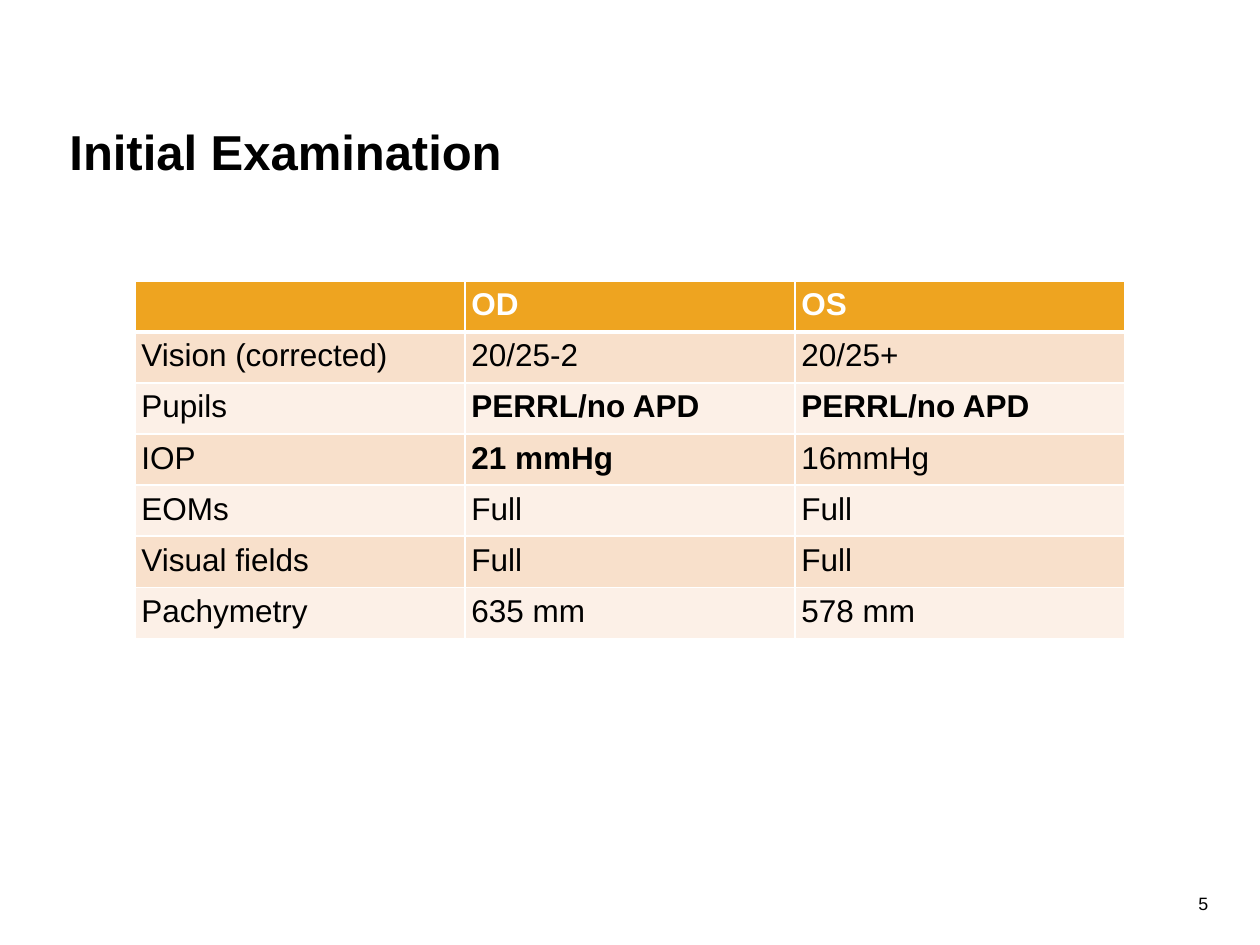
from lxml import etree
from pptx import Presentation
from pptx.dml.color import RGBColor
from pptx.enum.text import MSO_ANCHOR, PP_ALIGN
from pptx.oxml.ns import qn
from pptx.util import Cm, Pt

LEFT, RIGHT = PP_ALIGN.LEFT, PP_ALIGN.RIGHT
TOP, MIDDLE = MSO_ANCHOR.TOP, MSO_ANCHOR.MIDDLE
TITLE_ONLY = 5
INSET = Cm(0.13)

BLACK, WHITE = "000000", "FFFFFF"
HEADER_FILL = "EEA420"
BAND_FILLS = ("F8E0CB", "FCF0E7")
TITLE_FONT = {"name": "Arial", "size": Pt(28), "bold": True}
NUMBER_FONT = {"name": "Arial", "size": Pt(10.2), "bold": False}
CELL_FONT = {"name": "Arial", "size": Pt(18), "bold": False}

FINDINGS = [
    ("", "OD", "OS"),
    ("Vision (corrected)", "20/25-2", "20/25+"),
    ("Pupils", "PERRL/no APD", "PERRL/no APD"),
    ("IOP", "21 mmHg", "16mmHg"),
    ("EOMs", "Full", "Full"),
    ("Visual fields", "Full", "Full"),
    ("Pachymetry", "635 mm", "578 mm"),
]
NOTABLE = {"PERRL/no APD", "21 mmHg"}


def rgb(value):
    return RGBColor.from_string(value)


def set_all(target, values):
    for key, value in values.items():
        setattr(target, key, value)


def set_insets(target):
    set_all(target, dict.fromkeys(
        ("margin_left", "margin_top", "margin_right", "margin_bottom"), INSET))


def write(frame, text, font, color=BLACK, align=LEFT):
    frame.text = text
    paragraph = frame.paragraphs[0]
    paragraph.alignment = align
    set_all(paragraph.font, font)
    paragraph.font.color.rgb = rgb(color)
    return paragraph


def add_title(slide, text, left, top, width, height):
    title = slide.shapes.title
    set_all(title, {"left": left, "top": top, "width": width, "height": height})
    frame = title.text_frame
    set_insets(frame)
    set_all(frame, {"word_wrap": True, "vertical_anchor": MIDDLE})
    write(frame, text, TITLE_FONT)


def add_page_number(slide, number, left, top, width, height):
    frame = slide.shapes.add_textbox(left, top, width, height).text_frame
    set_insets(frame)
    set_all(frame, {"word_wrap": False, "vertical_anchor": TOP})
    write(frame, number, NUMBER_FONT, align=RIGHT).line_spacing = 0.9


def set_borders(cell, widths):
    """Draw white cell borders; widths maps each side to points."""
    properties = cell._tc.get_or_add_tcPr()
    for index, (side, width) in enumerate(widths.items()):
        line = etree.Element(qn(f"a:ln{side}"), w=str(Pt(width)))
        fill = etree.SubElement(line, qn("a:solidFill"))
        etree.SubElement(fill, qn("a:srgbClr"), val=WHITE)
        properties.insert(index, line)


def add_findings_table(slide, rows, left, top, width, height):
    table = slide.shapes.add_table(
        len(rows), len(rows[0]), left, top, width, height).table
    for column in table.columns:
        column.width = width // len(rows[0])
    for row in table.rows:
        row.height = height // len(rows)

    for r, texts in enumerate(rows):
        header = r == 0
        fill = HEADER_FILL if header else BAND_FILLS[(r - 1) % 2]
        borders = {"L": 1, "R": 1, "T": 3 if r == 1 else 1, "B": 3 if header else 1}
        for c, text in enumerate(texts):
            cell = table.cell(r, c)
            set_insets(cell)
            cell.vertical_anchor = TOP
            cell.fill.solid()
            cell.fill.fore_color.rgb = rgb(fill)
            set_borders(cell, borders)
            font = {**CELL_FONT, "bold": header or text in NOTABLE}
            write(cell.text_frame, text, font, WHITE if header else BLACK)


def main():
    deck = Presentation()
    deck.slide_width, deck.slide_height = Cm(25.4), Cm(19.05)
    slide = deck.slides.add_slide(deck.slide_layouts[TITLE_ONLY])
    add_title(slide, "Initial Examination",
              Cm(1.27), Cm(2.16), Cm(22.86), Cm(1.78))
    add_findings_table(slide, FINDINGS, Cm(2.72), Cm(5.66), Cm(19.96), Cm(7.21))
    add_page_number(slide, "5", Cm(23.98), Cm(17.91), Cm(0.51), Cm(0.66))
    deck.save("out.pptx")


if __name__ == "__main__":
    main()
